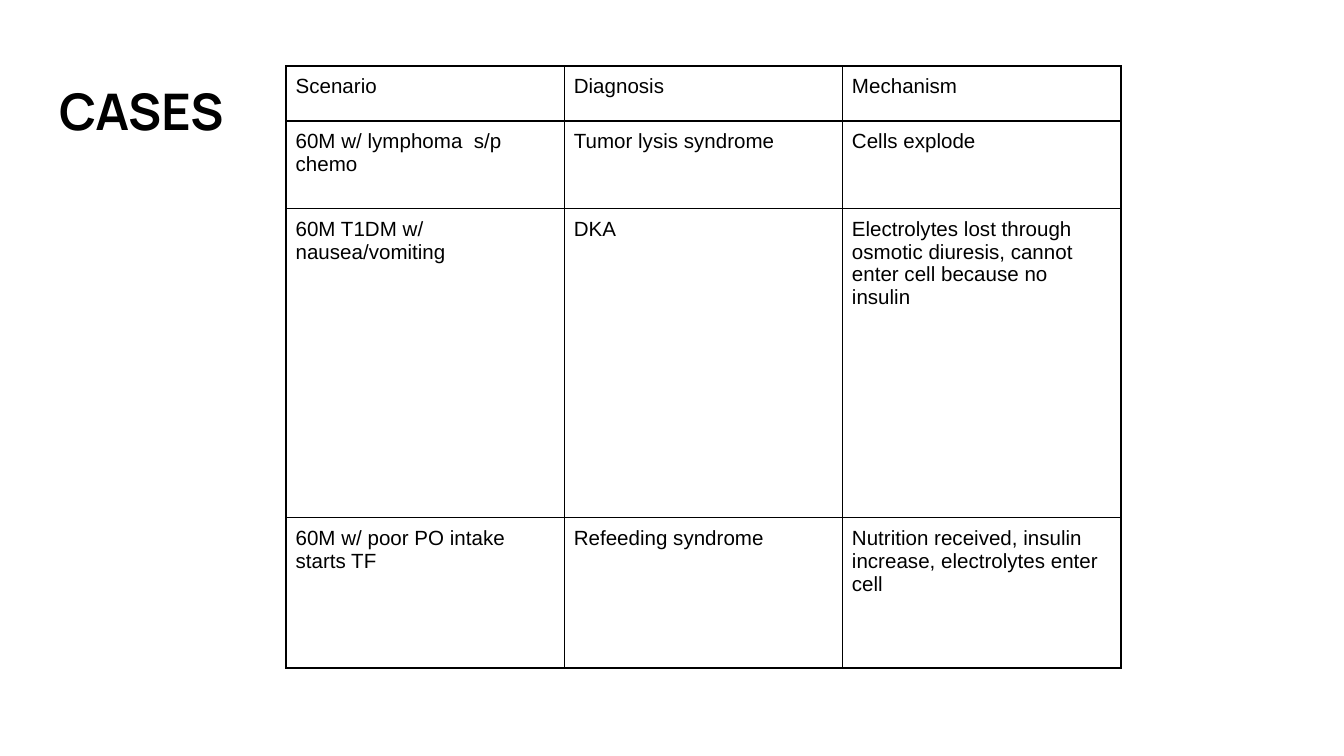
from lxml.etree import SubElement
from pptx import Presentation
from pptx.dml.color import RGBColor
from pptx.enum.text import MSO_ANCHOR, PP_ALIGN
from pptx.oxml.ns import qn
from pptx.util import Inches, Pt

COLORS = {"ink": "000000"}
WIDTHS = [2.07] * 3
HEIGHTS = [0.41, 0.65, 2.3, 1.12]
CASES = [
    ("Scenario", "Diagnosis", "Mechanism"),
    ("60M w/ lymphoma  s/p chemo", "Tumor lysis syndrome", "Cells explode"),
    ("60M T1DM w/ nausea/vomiting", "DKA",
     "Electrolytes lost through osmotic diuresis, cannot enter cell because no insulin"),
    ("60M w/ poor PO intake starts TF", "Refeeding syndrome",
     "Nutrition received, insulin increase, electrolytes enter cell"),
]


def add_run(para, text, font, size, bold=False):
    para.alignment = PP_ALIGN.LEFT
    run = para.add_run()
    run.text = text
    run.font.name = font
    run.font.size = Pt(size)
    run.font.bold = bold
    run.font.color.rgb = RGBColor.from_string(COLORS["ink"])


def set_inset(item, inset):
    """Give a cell or text frame the same margin on all sides."""
    item.margin_left = item.margin_right = Inches(inset)
    item.margin_top = item.margin_bottom = Inches(inset)


def set_title(slide, text):
    title = slide.shapes.title
    title.left, title.top = Inches(0.34), Inches(0.48)
    title.width, title.height = Inches(6.21), Inches(0.68)
    frame = title.text_frame
    frame.word_wrap = True
    frame.vertical_anchor = MSO_ANCHOR.MIDDLE
    set_inset(frame, 0.1)
    add_run(frame.paragraphs[0], text, "Manrope", 27, bold=True)


def set_border(cell):
    """Draw all four cell edges; they must come before the fill in the XML."""
    props = cell._tc.get_or_add_tcPr()
    for place, side in enumerate(("lnL", "lnR", "lnT", "lnB")):
        line = SubElement(props, qn(f"a:{side}"), w=str(Pt(1)))
        fill = SubElement(line, qn("a:solidFill"))
        SubElement(fill, qn("a:srgbClr"), val=COLORS["ink"])
        props.insert(place, line)


def fill_cell(cell, text):
    cell.fill.background()
    cell.vertical_anchor = MSO_ANCHOR.TOP
    set_inset(cell, 0.07)
    set_border(cell)
    add_run(cell.text_frame.paragraphs[0], text, "Arial", 11)


def add_grid(slide, data):
    frame = slide.shapes.add_table(
        len(data), len(WIDTHS), Inches(2.13), Inches(0.49),
        Inches(sum(WIDTHS)), Inches(sum(HEIGHTS)))
    table = frame.table
    table.first_row = table.horz_banding = False
    for col, width in zip(table.columns, WIDTHS):
        col.width = Inches(width)
    for row, height, texts in zip(table.rows, HEIGHTS, data):
        row.height = Inches(height)
        for cell, text in zip(row.cells, texts):
            fill_cell(cell, text)


def main():
    deck = Presentation()
    deck.slide_width = Inches(10)
    deck.slide_height = deck.slide_width * 9 // 16
    slide = deck.slides.add_slide(deck.slide_layouts[5])
    set_title(slide, "CASES")
    add_grid(slide, CASES)
    deck.save("out.pptx")


if __name__ == "__main__":
    main()
